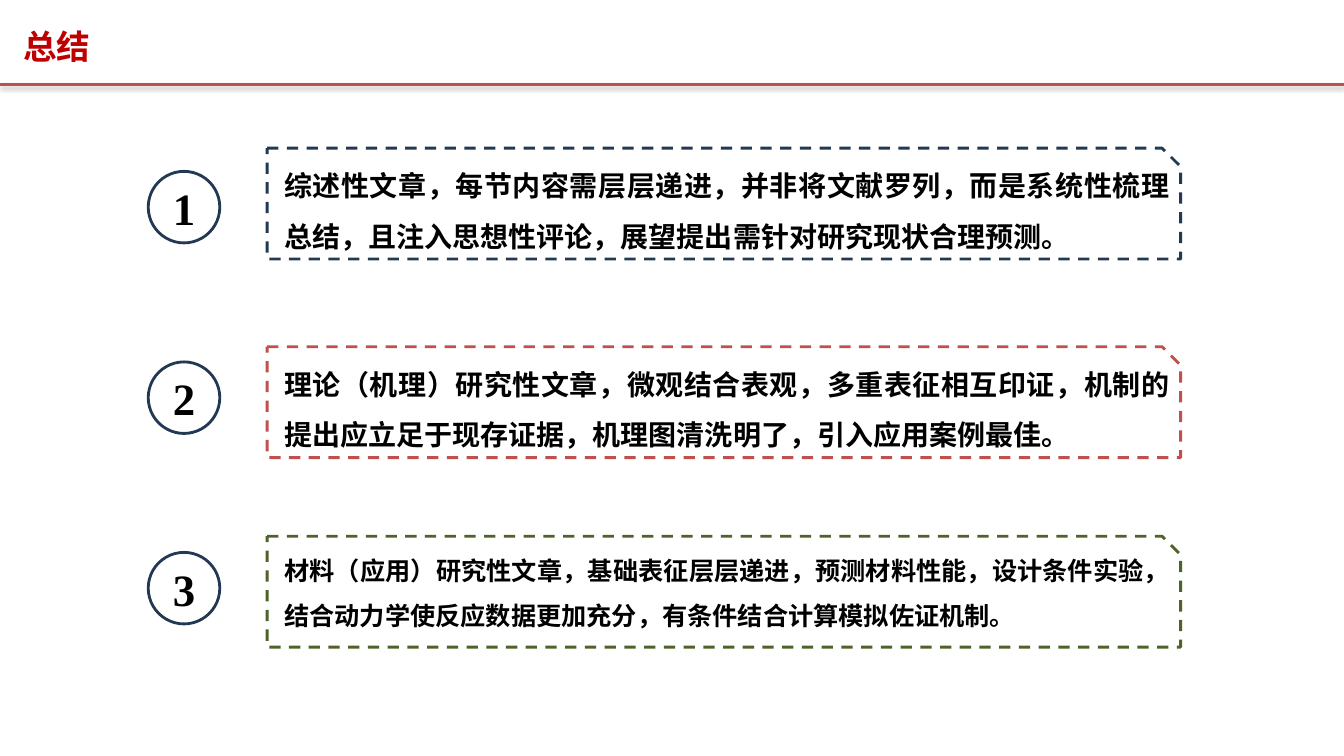
import lxml.etree
import pptx
import pptx.dml.color
import pptx.enum.dml
import pptx.enum.shapes
import pptx.enum.text
import pptx.oxml
import pptx.oxml.ns
import pptx.util

Inches = pptx.util.Inches
RGBColor = pptx.dml.color.RGBColor
Align = pptx.enum.text.PP_ALIGN
Shape = pptx.enum.shapes.MSO_SHAPE

TITLE_RED = RGBColor(0xC0, 0x00, 0x00)
RULE_RED = RGBColor(0xC0, 0x50, 0x4D)
NAVY = RGBColor(0x23, 0x39, 0x53)
GREEN = RGBColor(0x4F, 0x62, 0x28)
BLACK = RGBColor(0x00, 0x00, 0x00)

CHINESE_FONT = "Noto Sans CJK SC"
NUMBER_FONT = "Times New Roman"
SLIDE_WIDTH = 13.33
CARD_LEFT, CARD_WIDTH, CARD_HEIGHT = 2.65, 9.06, 1.1
CIRCLE_LEFT, CIRCLE_TOP, CIRCLE_SIZE, CIRCLE_PITCH = 1.47, 1.7, 0.71, 1.89

POINTS = [
    (1.47, NAVY, 20, "综述性文章，每节内容需层层递进，并非将文献罗列，而是系统性梳理总结，且注入思想性评论，展望提出需针对研究现状合理预测。"),
    (3.44, RULE_RED, 20, "理论（机理）研究性文章，微观结合表观，多重表征相互印证，机制的提出应立足于现存证据，机理图清洗明了，引入应用案例最佳。"),
    (5.32, GREEN, 18, "材料（应用）研究性文章，基础表征层层递进，预测材料性能，设计条件实验，结合动力学使反应数据更加充分，有条件结合计算模拟佐证机制。"),
]

RULE_SHADOW = (
    '<a:effectLst xmlns:a="http://schemas.openxmlformats.org/drawingml/2006/main">'
    '<a:outerShdw blurRad="39370" dist="20320" dir="5400000" rotWithShape="0">'
    '<a:srgbClr val="000000"><a:alpha val="38000"/></a:srgbClr>'
    "</a:outerShdw></a:effectLst>"
)


def write_text(shape, text, font_name, size, color, alignment):
    """Fill a shape with one bold paragraph and return that paragraph."""
    shape.text_frame.word_wrap = True
    paragraph = shape.text_frame.paragraphs[0]
    paragraph.text = text
    paragraph.alignment = alignment
    paragraph.font.name = font_name
    paragraph.font.size = pptx.util.Pt(size)
    paragraph.font.bold = True
    paragraph.font.color.rgb = color
    properties = paragraph._p.pPr.find(pptx.oxml.ns.qn("a:defRPr"))
    east_asian = lxml.etree.SubElement(properties, pptx.oxml.ns.qn("a:ea"))
    east_asian.set("typeface", font_name)
    return paragraph


def add_outline(slide, kind, left, top, width, height, color):
    """Add an unfilled shape with a coloured outline."""
    shape = slide.shapes.add_shape(
        kind, Inches(left), Inches(top), Inches(width), Inches(height)
    )
    shape.shadow.inherit = False
    shape.fill.background()
    shape.line.color.rgb = color
    shape.line.width = pptx.util.Pt(2)
    return shape


def add_header(slide, left, top, width, height):
    """Place the title and the shadowed rule below it."""
    title = slide.shapes.title
    title.left, title.top = Inches(left), Inches(top)
    title.width, title.height = Inches(width), Inches(height)
    title.text_frame.vertical_anchor = pptx.enum.text.MSO_ANCHOR.TOP
    title.text_frame.auto_size = pptx.enum.text.MSO_AUTO_SIZE.NONE
    write_text(title, "总结", CHINESE_FONT, 24, TITLE_RED, Align.LEFT)

    rule_top = Inches(top + height + 0.12)
    rule = slide.shapes.add_connector(
        pptx.enum.shapes.MSO_CONNECTOR.STRAIGHT,
        0, rule_top, Inches(SLIDE_WIDTH), rule_top,
    )
    rule.line.color.rgb = RULE_RED
    rule.line.width = pptx.util.Pt(2)
    rule._element.spPr.append(pptx.oxml.parse_xml(RULE_SHADOW))


def add_number(slide, number, left, top, size):
    """Draw a circled number."""
    circle = add_outline(slide, Shape.OVAL, left, top, size, size, NAVY)
    write_text(circle, str(number), NUMBER_FONT, 32, BLACK, Align.CENTER)


def add_card(slide, text, size, color, left, top, width, height):
    """Draw a dashed card with its justified text."""
    card = add_outline(
        slide, Shape.SNIP_1_RECTANGLE, left, top, width, height, color
    )
    card.line.dash_style = pptx.enum.dml.MSO_LINE.DASH
    text_box = slide.shapes.add_textbox(
        Inches(left + 0.07), Inches(top - 0.01),
        Inches(width - 0.08), Inches(height - 0.07),
    )
    paragraph = write_text(
        text_box, text, CHINESE_FONT, size, BLACK, Align.JUSTIFY
    )
    paragraph.line_spacing = 1.5


def main():
    """Build and save the summary slide."""
    presentation = pptx.Presentation()
    presentation.slide_width = Inches(SLIDE_WIDTH)
    presentation.slide_height = Inches(7.5)
    slide = presentation.slides.add_slide(presentation.slide_layouts[5])
    add_header(slide, 0.13, 0.21, 13.07, 0.51)
    for index, (top, color, size, text) in enumerate(POINTS):
        circle_top = CIRCLE_TOP + index * CIRCLE_PITCH
        add_number(slide, index + 1, CIRCLE_LEFT, circle_top, CIRCLE_SIZE)
        add_card(
            slide, text, size, color, CARD_LEFT, top, CARD_WIDTH, CARD_HEIGHT
        )
    presentation.save("out.pptx")


if __name__ == "__main__":
    main()
